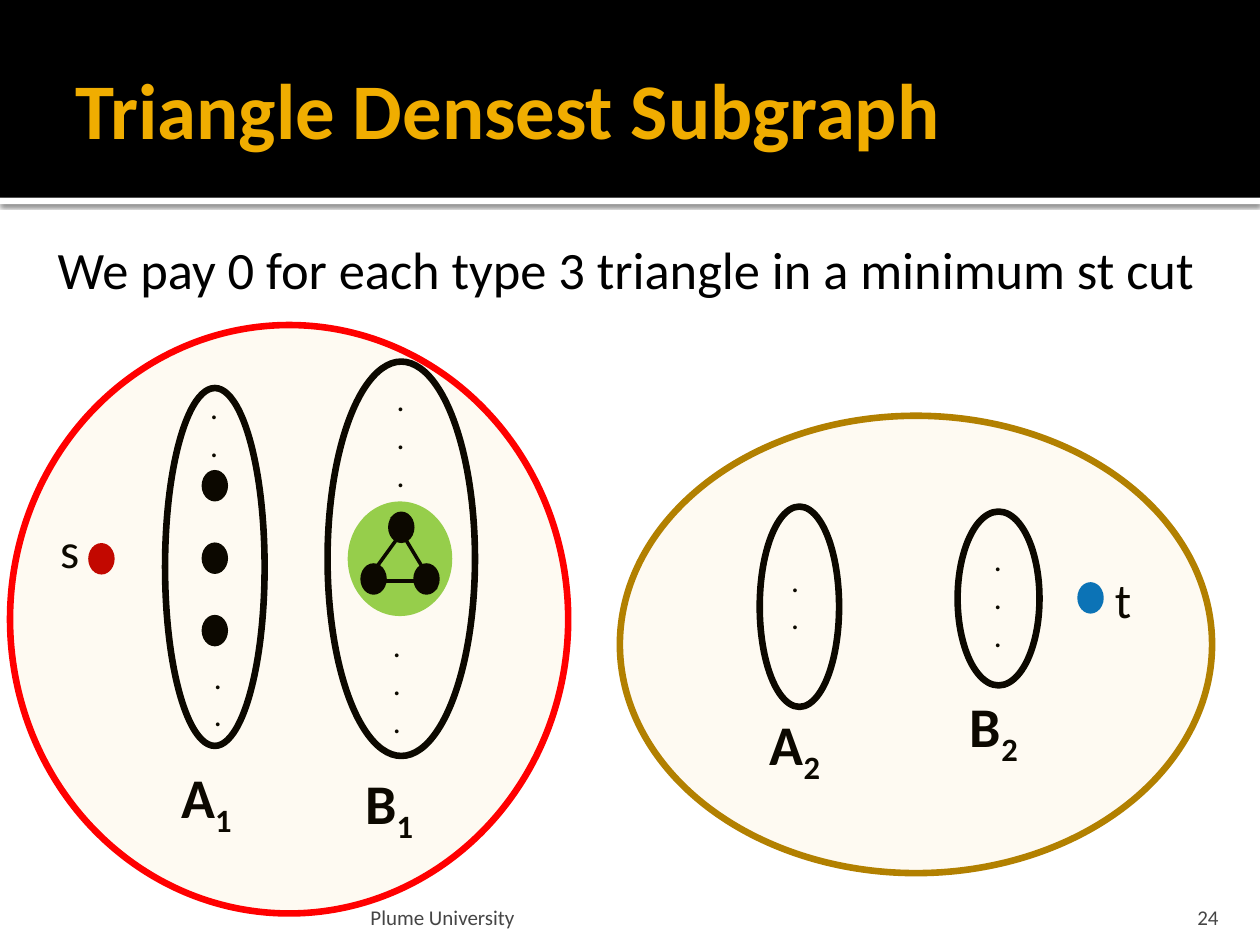
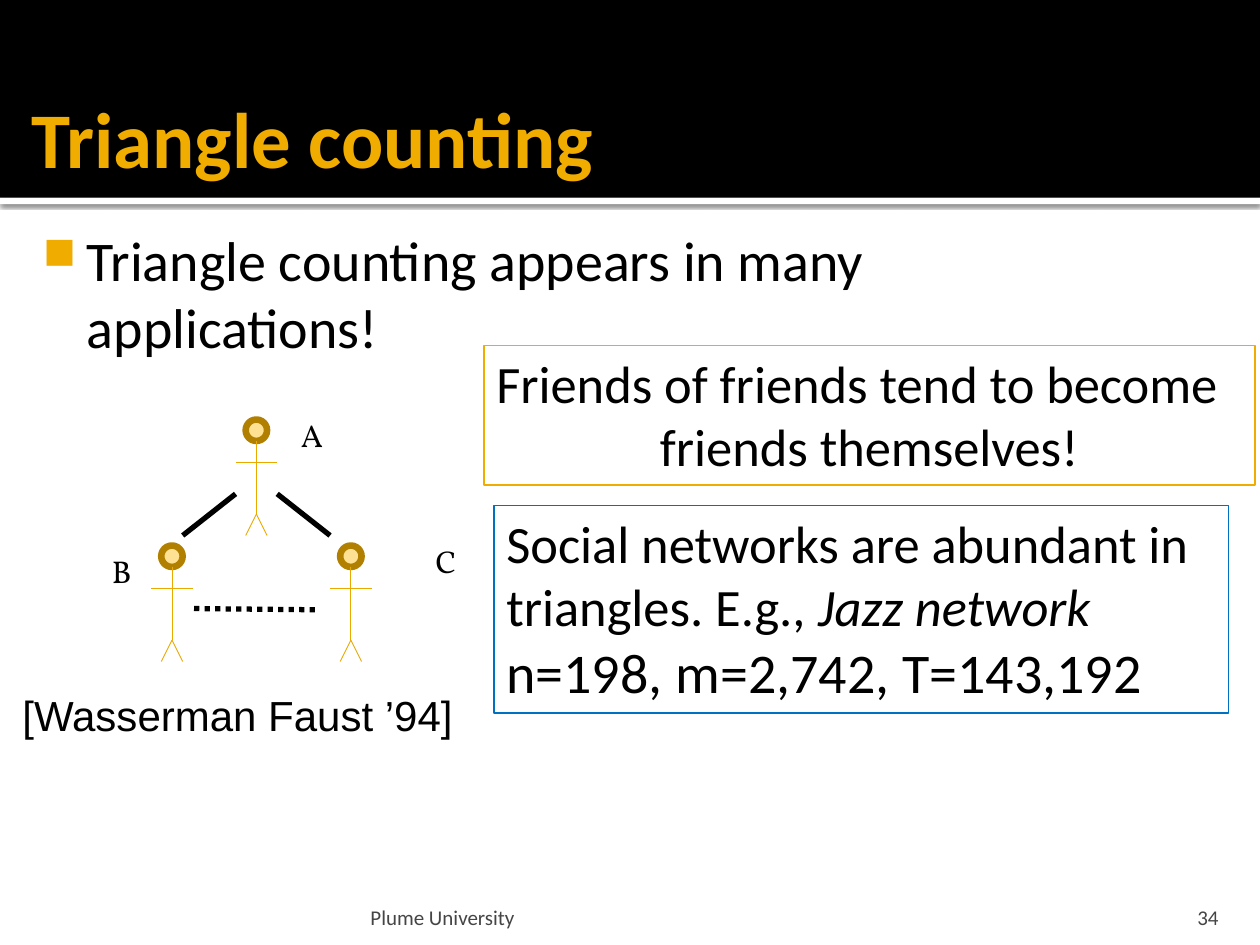
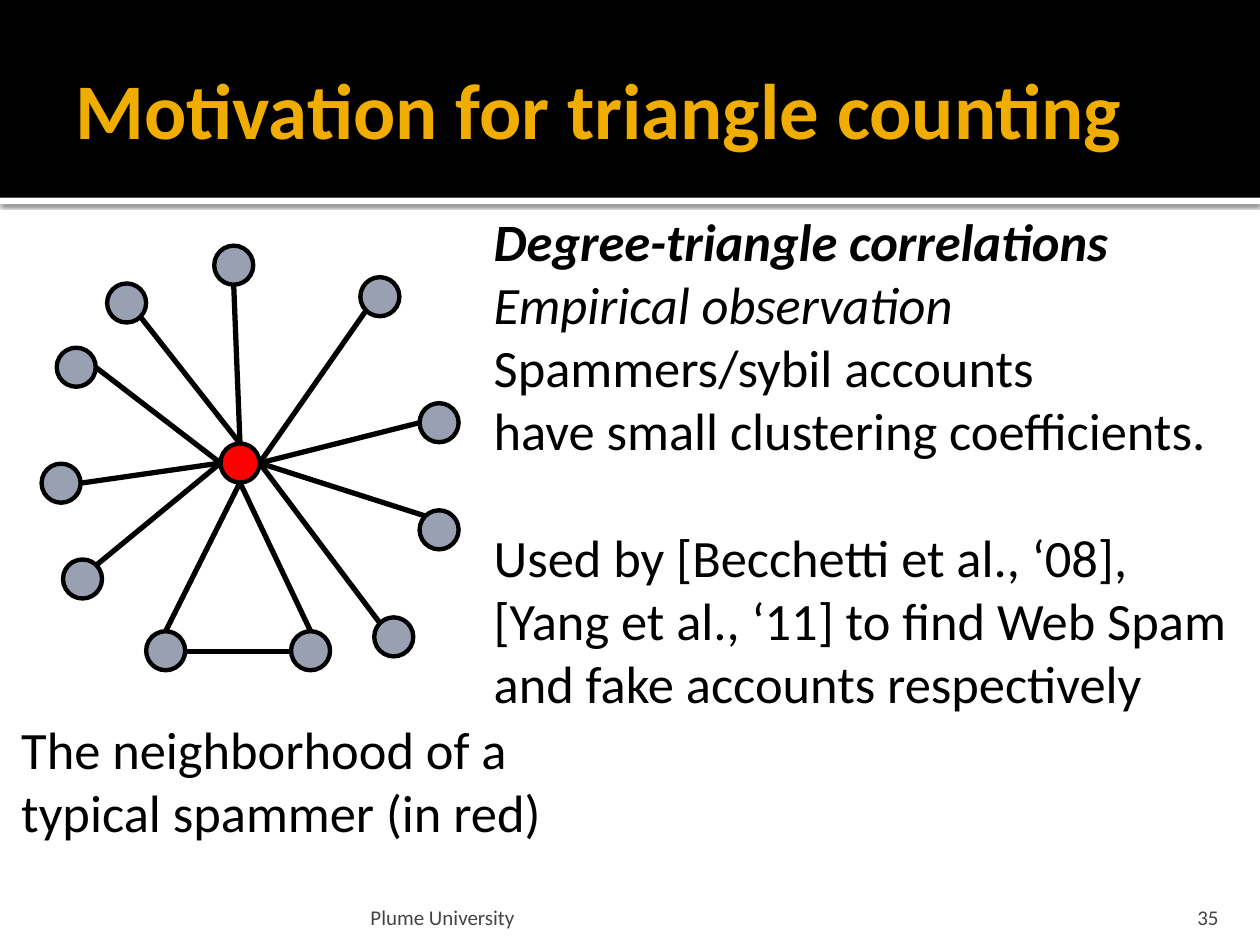
from math import cos, radians, sin

from lxml import etree
from pptx import Presentation
from pptx.dml.color import RGBColor
from pptx.enum.dml import MSO_LINE
from pptx.enum.shapes import MSO_CONNECTOR, MSO_SHAPE
from pptx.enum.text import MSO_ANCHOR, MSO_AUTO_SIZE, PP_ALIGN
from pptx.oxml.ns import qn
from pptx.util import Inches, Pt

RECT, OVAL = MSO_SHAPE.RECTANGLE, MSO_SHAPE.OVAL
STRAIGHT = MSO_CONNECTOR.STRAIGHT
DOTTED = MSO_LINE.ROUND_DOT
TOP, MIDDLE, BOTTOM = MSO_ANCHOR.TOP, MSO_ANCHOR.MIDDLE, MSO_ANCHOR.BOTTOM
LEFT, CENTER, RIGHT = PP_ALIGN.LEFT, PP_ALIGN.CENTER, PP_ALIGN.RIGHT
NO_FIT = MSO_AUTO_SIZE.NONE

COLORS = {
    "black": "000000", "white": "FFFFFF", "gold": "F0AD00", "gray": "454545",
    "red": "FF0000", "dark_red": "C00000", "green": "92D050", "blue": "0070C0",
    "brown": "B28000", "limb": "EBA900", "face": "FFE193", "node": "98A0B2",
}
FONT = "Calibri"
FOOTER = "Plume University"
TITLE_BOX = (0.5, 0.17, 9, 1.37)
INSETS = (0.1, 0.05, 0.1, 0.05)
SITES = {"right": 0, "bottom_right": 45, "bottom": 90, "bottom_left": 135,
         "left": 180, "top_left": 225, "top": 270, "top_right": 315}


def rgb(name):
    return RGBColor.from_string(COLORS[name])


def inches(values):
    return [Inches(v) for v in values]


def add_shape(s, kind, box, fill=None, line=None, width=1):
    sp = s.shapes.add_shape(kind, *inches(box))
    sp.shadow.inherit = False
    if fill:
        sp.fill.solid()
        sp.fill.fore_color.rgb = rgb(fill)
    else:
        sp.fill.background()
    if line:
        sp.line.color.rgb = rgb(line)
        sp.line.width = Pt(width)
    else:
        sp.line.fill.background()
    return sp


def add_line(s, start, end, color="black", width=3.0, dash=None):
    ln = s.shapes.add_connector(STRAIGHT, *inches(start + end))
    ln.line.color.rgb = rgb(color)
    ln.line.width = Pt(width)
    if dash:
        ln.line.dash_style = dash
    etree.SubElement(ln.element.spPr, qn("a:effectLst"))


def write(sp, text, size, color="black", font=FONT, bold=False, align=LEFT,
          anchor=TOP, insets=INSETS):
    tf = sp.text_frame
    tf.text = text
    tf.word_wrap = True
    tf.auto_size = NO_FIT
    tf.vertical_anchor = anchor
    (tf.margin_left, tf.margin_top,
     tf.margin_right, tf.margin_bottom) = inches(insets)
    for p in tf.paragraphs:
        p.alignment = align
        for r in p.runs:
            style_run(r, size, color, font, bold)
    return tf


def style_run(r, size, color="black", font=FONT, bold=False, italic=False):
    r.font.size = Pt(size)
    r.font.name = font
    r.font.bold = bold
    r.font.italic = italic
    r.font.color.rgb = rgb(color)


def add_text(s, box, text, size, **style):
    return write(s.shapes.add_textbox(*inches(box)), text, size, **style)


def add_bands(s):
    band = add_shape(s, RECT, (0, 0, 10, 1.57), "black")
    rule = add_shape(s, RECT, (0, 1.57, 10, 0.05), "white")
    effects = rule.element.spPr.find(qn("a:effectLst"))
    shadow = etree.SubElement(effects, qn("a:outerShdw"), blurRad=str(Pt(2.5)),
                              dist=str(Pt(0.8)), dir="5400000")
    clr = etree.SubElement(shadow, qn("a:srgbClr"), val=COLORS["black"])
    etree.SubElement(clr, qn("a:alpha"), val="60000")
    for sp in (band, rule):
        s.shapes.element.insert(2, sp.element)


def add_slide(prs, title, number, title_box=TITLE_BOX):
    s = prs.slides.add_slide(prs.slide_layouts[5])
    add_bands(s)
    sp = s.shapes.title
    sp.left, sp.top, sp.width, sp.height = inches(title_box)
    write(sp, title, 45, color="gold", bold=True, anchor=MIDDLE,
          insets=(0.1, 0.05, 0.05, 0.05))
    add_text(s, (2.89, 7.08, 6.02, 0.3), FOOTER, 12, color="gray",
             anchor=BOTTOM, insets=(0.05, 0.05, 0.05, 0))
    add_text(s, (8.97, 7.08, 0.8, 0.3), str(number), 12, color="gray",
             align=RIGHT, anchor=BOTTOM, insets=(0.1, 0.05, 0.1, 0))
    return s


def add_vertex(s, x, y, color="black"):
    add_shape(s, OVAL, (x, y, 0.21, 0.25), color)


def add_green_triangle(s, x, y):
    add_shape(s, OVAL, (x, y, 0.83, 0.91), "green")
    for dx, dy in ((0.32, 0.08), (0.1, 0.49), (0.52, 0.49)):
        add_vertex(s, x + dx, y + dy)
    for x1, y1, x2, y2 in ((0.17, 0.63, 0.67, 0.63),
                           (0.2, 0.56, 0.44, 0.23),
                           (0.7, 0.7, 0.35, 0.12)):
        add_line(s, (x + x1, y + y1), (x + x2, y + y2), width=2)


def add_cut_side(s, box, outline, terminal, rings, labels, dots):
    x, y, w, h = box
    name, color, (node_x, node_y), (name_x, name_y) = terminal
    add_vertex(s, x + node_x, y + node_y, color)
    add_text(s, (x + name_x, y + name_y, 0.43, 0.88), name, 28)
    for dx, dy, ring_w, ring_h in rings:
        add_shape(s, OVAL, (x + dx, y + dy, ring_w, ring_h),
                  line="black", width=3.78)
    for letter, index, dx, dy in labels:
        tf = add_text(s, (x + dx, y + dy, 0.63, 0.64), letter, 32, bold=True)
        r = tf.paragraphs[0].add_run()
        r.text = index
        style_run(r, 32, bold=True)
        r._r.get_or_add_rPr().set("baseline", "-25000")
    for dx, dy, count in dots:
        add_text(s, (x + dx, y + dy, 0.27, 1.01), "\n".join("." * count), 18)
    wash = add_shape(s, OVAL, box, "gold", outline, 3.78)
    clr = wash.element.spPr.find(qn("a:solidFill")).find(qn("a:srgbClr"))
    etree.SubElement(clr, qn("a:alpha"), val="5000")


def build_densest_subgraph(prs):
    s = add_slide(prs, "Triangle Densest Subgraph", 24)
    for i in range(3):
        add_vertex(s, 1.6, 3.73 + 0.575 * i)
    add_green_triangle(s, 2.76, 3.98)
    add_cut_side(
        s, (0.08, 2.58, 4.43, 4.67), "red",
        terminal=("s", "dark_red", (0.62, 1.73), (0.3, 1.49)),
        rings=[(1.23, 0.5, 0.79, 2.84), (2.52, 0.29, 1.17, 3.13)],
        labels=[("A", "1", 1.26, 3.42), ("B", "1", 2.72, 3.47)],
        dots=[(2.97, 0.39, 3), (2.94, 2.34, 3), (1.52, 2.59, 2), (1.49, 0.45, 2)])
    add_cut_side(
        s, (4.92, 3.3, 4.7, 3.63), "brown",
        terminal=("t", "blue", (3.63, 1.32), (3.83, 1.17)),
        rings=[(1.11, 0.72, 0.63, 1.59), (2.68, 0.76, 0.65, 1.38)],
        labels=[("A", "2", 1.09, 2.28), ("B", "2", 2.68, 2.14)],
        dots=[(1.26, 1.1, 2), (2.87, 0.94, 3)])
    add_text(s, (0.36, 1.83, 9.3, 0.61),
             "We pay 0 for each type 3 triangle in a minimum st cut", 30)


def add_person(s, x, y):
    add_shape(s, OVAL, (x + 0.08, y, 0.17, 0.17), "face", "brown", 3.78)
    mid = 0.165
    for x1, y1, x2, y2 in ((mid, 0.17, mid, 0.75), (0, 0.34, 0.33, 0.34),
                           (mid, 0.75, 0.08, 0.92), (mid, 0.75, 0.25, 0.92)):
        add_line(s, (x + x1, y + y1), (x + x2, y + y2), "limb", 0.5)


def add_friend_triangle(s, x, y):
    people = (("A", 0.67, 0.08, 1.5, 0), ("B", 0, 1.08, 0, 1.08),
              ("C", 1.42, 1.08, 2.16, 1))
    for name, dx, dy, name_x, name_y in people:
        add_person(s, x + dx, y + dy)
        add_text(s, (x + name_x - (0.41 if name != "C" else 0),
                     y + name_y, 0.38, 0.4), name, 18, font="Vollkorn")
    add_line(s, (x + 0.67, y + 0.67), (x + 0.25, y + 1))
    add_line(s, (x + 1.42, y + 1), (x + 1, y + 0.67))
    add_line(s, (x + 0.34, y + 1.58), (x + 1.34, y + 1.59), dash=DOTTED)


def add_bullet(p):
    pPr = p._p.get_or_add_pPr()
    pPr.set("marL", str(Inches(0.48)))
    pPr.set("indent", str(-Inches(0.35)))
    clr = etree.SubElement(pPr, qn("a:buClr"))
    etree.SubElement(clr, qn("a:srgbClr"), val=COLORS["gold"])
    etree.SubElement(pPr, qn("a:buSzPct"), val="80000")
    etree.SubElement(pPr, qn("a:buChar"), char="■")


def build_triangle_counting(prs):
    s = add_slide(prs, "Triangle counting", 34, (0.15, 0.5, 9.33, 1.17))
    add_friend_triangle(s, 1.2, 3.25)
    add_text(s, (0.08, 5.42, 3.67, 0.5), "[Wasserman Faust ’94]", 24, font="Arial")

    friends = add_shape(s, RECT, (3.84, 2.74, 6.12, 1.11), line="gold", width=0.75)
    tf = write(friends, "Friends of friends tend to become\nfriends themselves!", 30)
    tf.paragraphs[1].alignment = CENTER

    networks = add_shape(s, RECT, (3.92, 4.01, 5.83, 1.65), line="blue", width=0.75)
    tf = write(networks, "Social networks are abundant in\ntriangles. E.g., \n"
               "n=198, m=2,742, T=143,192", 30)
    r = tf.paragraphs[1].add_run()
    r.text = "Jazz network"
    style_run(r, 30, italic=True)
    tf.paragraphs[2].runs[0].font.size = Pt(32)

    tf = add_text(s, (0.15, 1.69, 9, 5.06),
                  "Triangle counting appears in many applications!", 32,
                  insets=(0.06, 0.1, 0.1, 0.05))
    add_bullet(tf.paragraphs[0])


def site(x, y, size, name):
    angle = radians(SITES[name])
    radius = size / 2
    return (x + radius + radius * cos(angle), y + radius + radius * sin(angle))


def add_spammer_star(s, x, y):
    size = 0.31
    hub = (x + 1.42, y + 1.57)
    neighbors = [
        (0.83, 3.06, "top", "bottom"), (1.98, 3.06, "top", "bottom"),
        (0, 1.73, "right", "left"), (0.52, 0.3, "bottom_right", "top"),
        (1.37, 0, "bottom", "top"), (3, 1.25, "left", "right"),
        (2.64, 2.95, "top_left", "right"), (0.17, 2.49, "top_right", "left"),
        (2.53, 0.25, "bottom_left", "right"), (3, 2.1, "top_left", "right"),
        (0.12, 0.81, "right", "left"),
    ]
    for dx, dy, end, start in neighbors:
        add_line(s, site(*hub, size, start), site(x + dx, y + dy, size, end))
        add_shape(s, OVAL, (x + dx, y + dy, size, size), "node", "black", 2.5)
    add_line(s, (x + 1.98, y + 3.22), (x + 1.14, y + 3.22))
    add_shape(s, OVAL, hub + (size, size), "red", "black", 2.5)


def build_motivation(prs):
    s = add_slide(prs, "Motivation for triangle counting", 35)
    add_spammer_star(s, 0.33, 1.95)
    tf = add_text(s, (3.82, 1.61, 6.1, 4.14),
                  "Degree-triangle correlations\n"
                  "Empirical observation\n"
                  "Spammers/sybil accounts\n"
                  "have small clustering coefficients.\n"
                  "Used by [Becchetti et al., ‘08],\n"
                  "[Yang et al., ‘11] to find Web Spam\n"
                  "and fake accounts respectively", 30)
    heading, subheading = tf.paragraphs[:2]
    style_run(heading.runs[0], 30, bold=True, italic=True)
    style_run(subheading.runs[0], 30, italic=True)
    tf.paragraphs[4].space_before = Pt(36.6)
    add_text(s, (0.07, 5.64, 4.41, 1.11),
             "The neighborhood of a\ntypical spammer (in red)", 30)


def main():
    prs = Presentation()
    prs.slide_width, prs.slide_height = Inches(10), Inches(7.5)
    build_densest_subgraph(prs)
    build_triangle_counting(prs)
    build_motivation(prs)
    prs.save("out.pptx")


if __name__ == "__main__":
    main()
